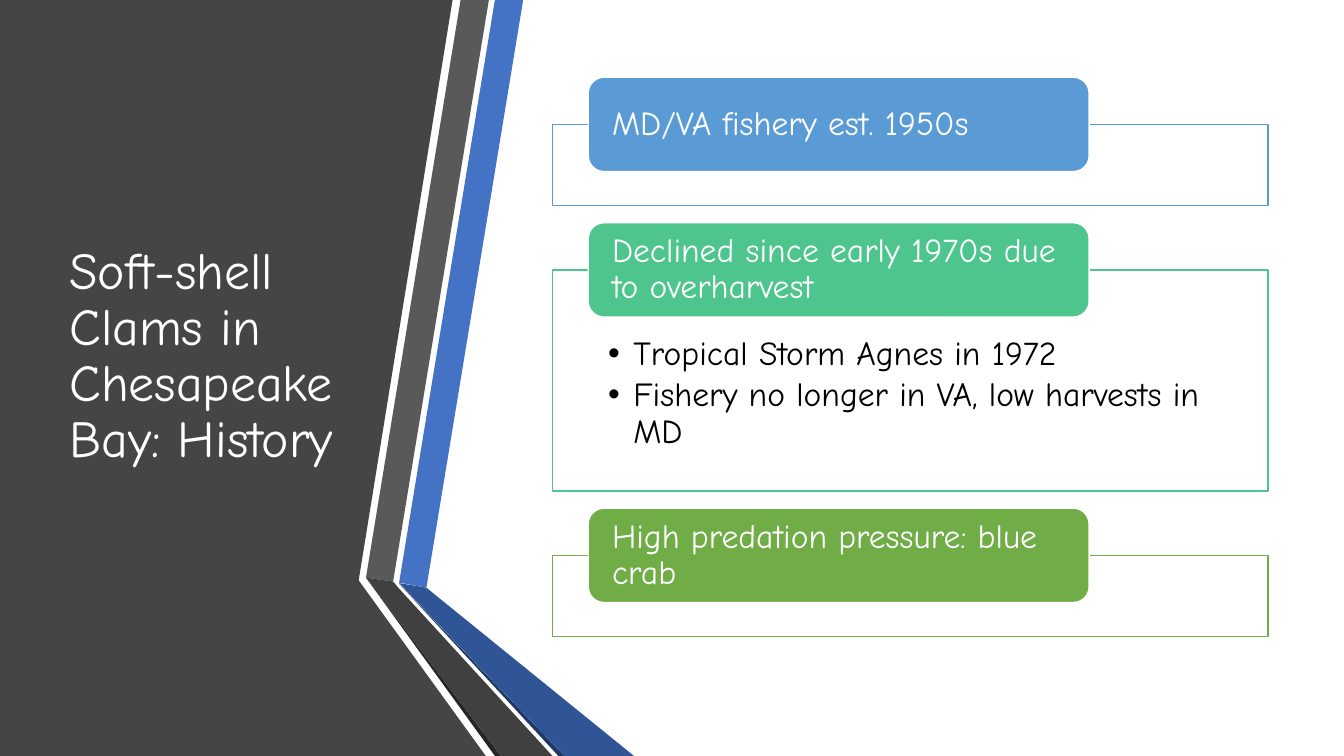
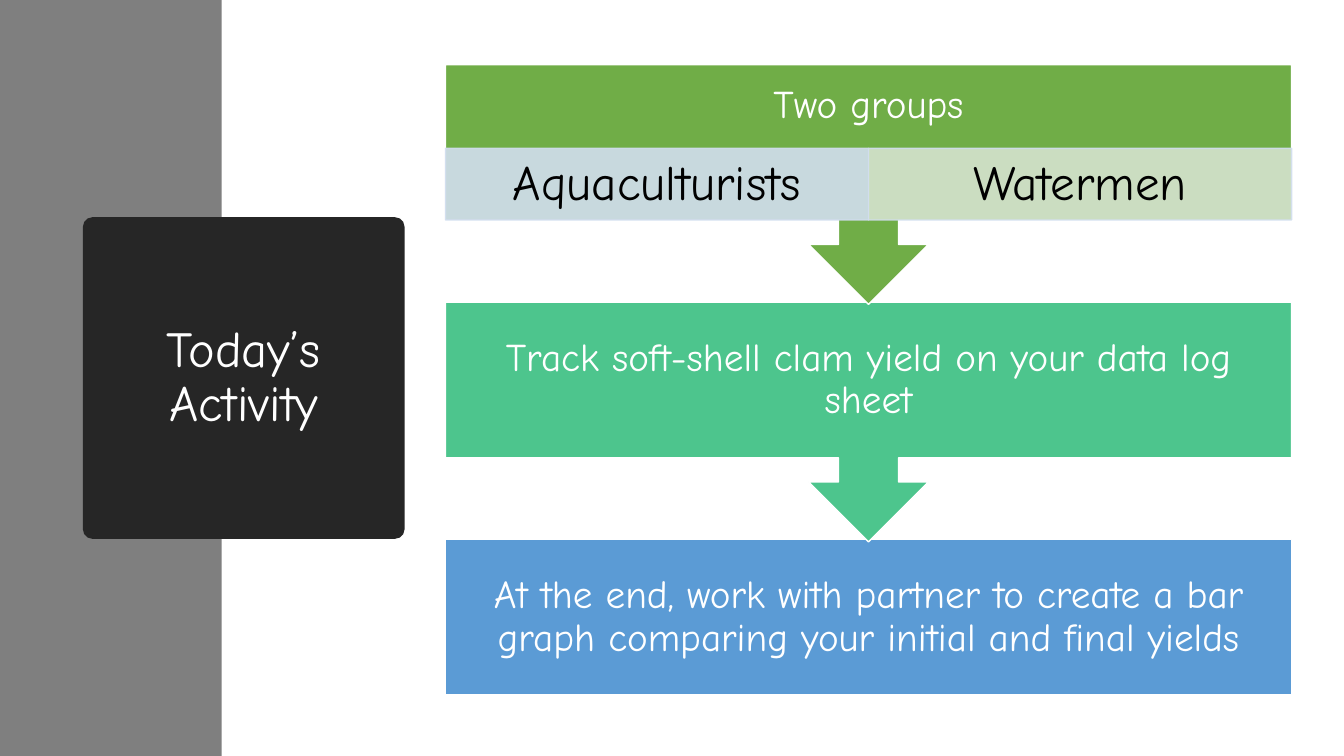
from dataclasses import dataclass

from lxml.etree import SubElement
from pptx import Presentation
from pptx.dml.color import RGBColor
from pptx.enum.shapes import MSO_SHAPE
from pptx.enum.text import MSO_ANCHOR, PP_ALIGN
from pptx.oxml.ns import qn
from pptx.shapes.autoshape import Shape
from pptx.slide import Slide
from pptx.util import Pt

FONT = "Comic Neue"
COLORS = {
    "white": "FFFFFF",
    "black": "000000",
    "slate": "454545",
    "gray": "595959",
    "charcoal": "404040",
    "ink": "262626",
    "side gray": "7F7F7F",
    "blue": "4472C4",
    "deep blue": "2F5597",
    "navy": "203864",
    "sky": "5B9BD5",
    "mint": "4DC58D",
    "green": "70AD47",
    "pale blue": "D2DEEF",
    "pale green": "D5E3CF",
}
SLIDE_WIDTH, SLIDE_HEIGHT = 960, 540


@dataclass(frozen=True)
class Box:
    left: float
    top: float
    width: float
    height: float


@dataclass(frozen=True)
class TextStyle:
    size: float
    color: str = "white"
    alignment: PP_ALIGN = PP_ALIGN.LEFT
    anchor: MSO_ANCHOR = MSO_ANCHOR.MIDDLE
    insets: tuple[float, float, float, float] = (7.2, 3.6, 7.2, 3.6)
    bulleted: bool = False


@dataclass(frozen=True)
class Band:
    color: str
    points: tuple[tuple[float, float], ...]


@dataclass(frozen=True)
class Topic:
    heading: str
    color: str
    height: float
    details: tuple[str, ...] = ()


@dataclass(frozen=True)
class Step:
    text: str
    color: str
    bottom_inset: float = 16


BANDS = (
    Band("slate", ((0, 0), (323.3, 0), (256.3, 414), (256.3, 414.7), (347, 540), (0, 540))),
    Band("blue", ((285.1, 416.2), (304.6, 419.8), (373.7, 0), (353.5, 0))),
    Band("gray", ((349.2, 0), (329, 0), (261.4, 412.6), (280.8, 415.4))),
    Band("ink", ((261.4, 412.6), (353.5, 540), (357.8, 540))),
    Band("navy", ((285.1, 416.9), (398.9, 540), (403.2, 540))),
    Band("deep blue", ((285.1, 416.5), (403.2, 540), (452.9, 540), (304.6, 419.8))),
    Band("charcoal", ((394.6, 540), (284.4, 419.8), (280.8, 415.4), (261.4, 412.6), (357.8, 540))),
)
TOPICS = (
    Topic("MD/VA fishery est. 1950s", "sky", 57.9),
    Topic(
        "Declined since early 1970s due to overharvest",
        "mint",
        157.9,
        ("Tropical Storm Agnes in 1972", "Fishery no longer in VA, low harvests in MD"),
    ),
    Topic("High predation pressure: blue crab", "green", 57.9),
)
STEPS = (
    Step("Two groups", "green", 68),
    Step("Track soft-shell clam yield on your data log sheet", "mint"),
    Step("At the end, work with partner to create a bar graph comparing your initial and final yields", "sky"),
)
GROUPS = (("Aquaculturists", "pale blue"), ("Watermen", "pale green"))

HEADING_STYLE = TextStyle(24, insets=(13.7, 0, 13.7, 0))
DETAIL_STYLE = TextStyle(24, "black", anchor=MSO_ANCHOR.TOP, insets=(39.7, 47.5, 39.7, 13.7), bulleted=True)
GROUP_STYLE = TextStyle(35, "black", PP_ALIGN.CENTER, insets=(19.4, 3.6, 19.4, 3.6))


def rgb(name: str) -> RGBColor:
    return RGBColor.from_string(COLORS[name])


def paint(shape: Shape, fill: str, line: str | None = None) -> None:
    shape.shadow.inherit = False
    shape.fill.solid()
    shape.fill.fore_color.rgb = rgb(fill)
    if line:
        shape.line.color.rgb = rgb(line)
        shape.line.width = Pt(1)
    else:
        shape.line.fill.background()


def set_opacity(shape: Shape, percent: int) -> None:
    """Make both the fill and the line partly transparent."""
    for color in shape.fill._xPr.iter(qn("a:srgbClr")):
        SubElement(color, qn("a:alpha"), val=str(percent * 1000))


def add_bullet(paragraph) -> None:
    properties = paragraph._p.get_or_add_pPr()
    properties.set("marL", str(Pt(18)))
    properties.set("indent", str(Pt(-18)))
    SubElement(properties, qn("a:buFont"), typeface="Arial")
    SubElement(properties, qn("a:buChar"), char="•")


def write(shape: Shape, lines: tuple[str, ...], style: TextStyle) -> None:
    frame = shape.text_frame
    frame.word_wrap = True
    frame.vertical_anchor = style.anchor
    frame.margin_left, frame.margin_top, frame.margin_right, frame.margin_bottom = map(Pt, style.insets)
    frame.text = "\n".join(lines)
    for paragraph in frame.paragraphs:
        paragraph.alignment = style.alignment
        paragraph.line_spacing = 0.9
        if style.bulleted:
            paragraph.space_after = Pt(3.6)
            add_bullet(paragraph)
        for run in paragraph.runs:
            run.font.name = FONT
            run.font.size = Pt(style.size)
            run.font.color.rgb = rgb(style.color)


def add_shape(slide: Slide, kind: MSO_SHAPE, box: Box, fill: str, line: str | None = None) -> Shape:
    shape = slide.shapes.add_shape(kind, Pt(box.left), Pt(box.top), Pt(box.width), Pt(box.height))
    paint(shape, fill, line)
    return shape


def add_band(slide: Slide, band: Band) -> None:
    start, *others = [(Pt(x), Pt(y)) for x, y in band.points]
    builder = slide.shapes.build_freeform(*start)
    builder.add_line_segments(others, close=True)
    paint(builder.convert_to_shape(), band.color)


def add_topic(slide: Slide, topic: Topic, top: float) -> None:
    heading_height = 67.4
    panel = add_shape(slide, MSO_SHAPE.RECTANGLE, Box(394.7, top, 511.2, topic.height), "white", topic.color)
    if topic.details:
        write(panel, topic.details, DETAIL_STYLE)
    heading_box = Box(420.2, top - heading_height / 2, 357.8, heading_height)
    heading = add_shape(slide, MSO_SHAPE.ROUNDED_RECTANGLE, heading_box, topic.color, "white")
    write(heading, (topic.heading,), HEADING_STYLE)


def build_history(slide: Slide) -> None:
    for band in BANDS:
        add_band(slide, band)
    title = slide.shapes.add_textbox(Pt(42.5), Pt(54), Pt(219), Pt(402))
    write(title, ("Soft-shell Clams in Chesapeake Bay: History",), TextStyle(37))
    top, gap = 88.9, 46
    for topic in TOPICS:
        add_topic(slide, topic, top)
        top += topic.height + gap


def build_activity(slide: Slide) -> None:
    add_shape(slide, MSO_SHAPE.RECTANGLE, Box(0, 0, 158.4, SLIDE_HEIGHT), "side gray")
    title = add_shape(slide, MSO_SHAPE.ROUNDED_RECTANGLE, Box(59.2, 155.1, 229.8, 229.8), "ink")
    title.adjustments[0] = 0.03
    write(title, ("Today’s Activity",), TextStyle(36, alignment=PP_ALIGN.CENTER))

    left, top, width, pitch = 318.2, 46.2, 604.4, 169.6
    last = len(STEPS) - 1
    for index in range(last, -1, -1):
        step = STEPS[index]
        kind, height = (
            (MSO_SHAPE.RECTANGLE, 111) if index == last else (MSO_SHAPE.DOWN_ARROW_CALLOUT, 171.2)
        )
        box = Box(left, top + index * pitch, width, height)
        shape = add_shape(slide, kind, box, step.color, "white")
        style = TextStyle(28, alignment=PP_ALIGN.CENTER, insets=(16, 16, 16, step.bottom_inset))
        write(shape, (step.text,), style)

    group_width = width / len(GROUPS)
    for index, (name, color) in enumerate(GROUPS):
        box = Box(left + index * group_width, 106, group_width, 51.2)
        group = add_shape(slide, MSO_SHAPE.RECTANGLE, box, color, "pale blue")
        set_opacity(group, 90)
        write(group, (name,), GROUP_STYLE)


def main() -> None:
    presentation = Presentation()
    presentation.slide_width, presentation.slide_height = Pt(SLIDE_WIDTH), Pt(SLIDE_HEIGHT)
    blank_layout = presentation.slide_layouts[6]
    for build in (build_history, build_activity):
        build(presentation.slides.add_slide(blank_layout))
    presentation.save("out.pptx")


if __name__ == "__main__":
    main()
